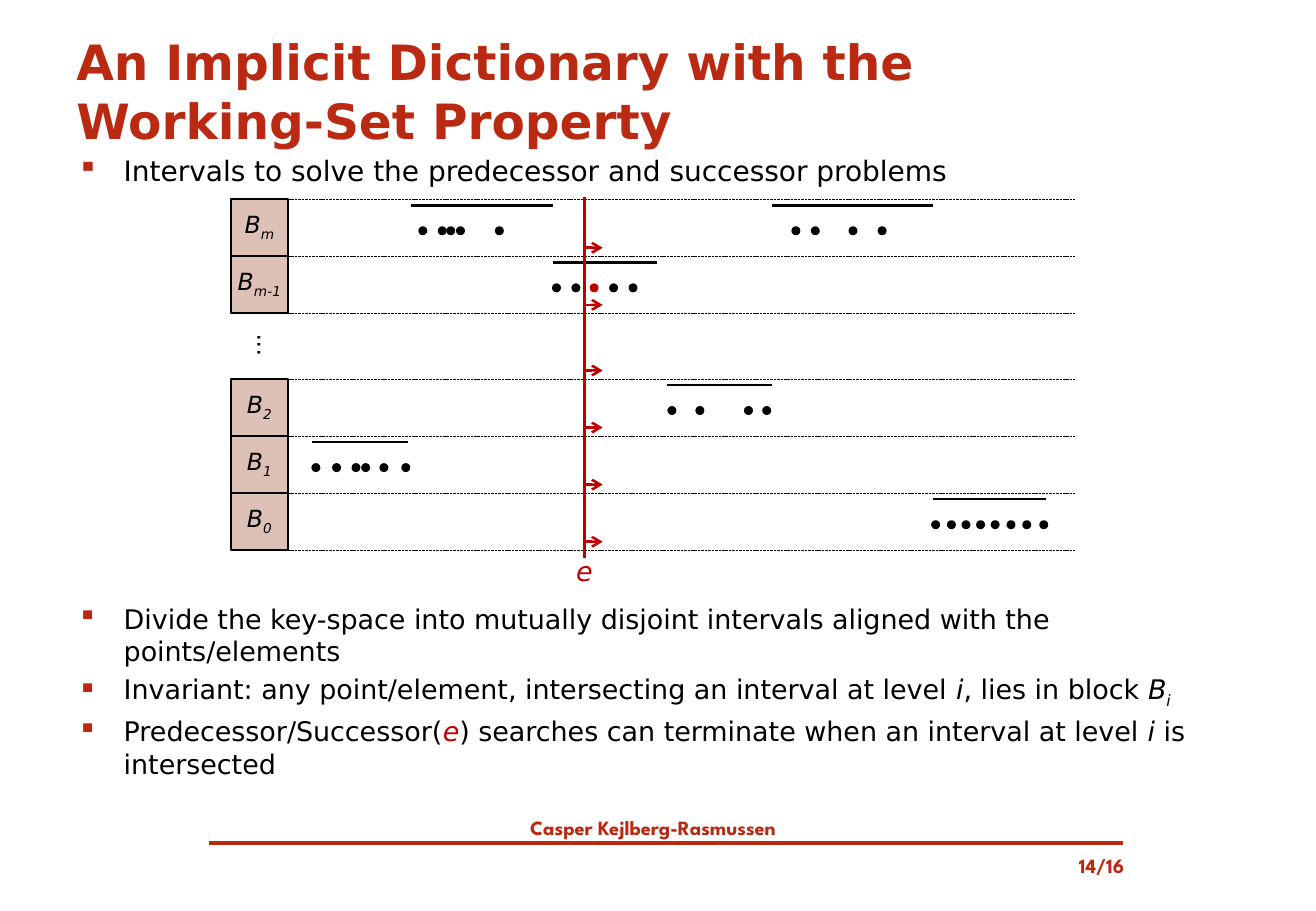
from lxml import etree
from pptx import Presentation
from pptx.dml.color import RGBColor
from pptx.enum.dml import MSO_LINE
from pptx.enum.shapes import MSO_CONNECTOR, MSO_SHAPE
from pptx.enum.text import MSO_ANCHOR, PP_ALIGN
from pptx.oxml.ns import qn
from pptx.util import Inches, Pt

STRAIGHT = MSO_CONNECTOR.STRAIGHT
RECT, OVAL = MSO_SHAPE.RECTANGLE, MSO_SHAPE.OVAL
DASH = MSO_LINE.SQUARE_DOT
TOP, MIDDLE = MSO_ANCHOR.TOP, MSO_ANCHOR.MIDDLE
LEFT, CENTER, RIGHT = PP_ALIGN.LEFT, PP_ALIGN.CENTER, PP_ALIGN.RIGHT

SANS, SPARTAN = "DejaVu Sans", "League Spartan"
BRAND, SEARCH, BLOCK, BLACK = "BA2A12", "C00000", "DDC0B6", "000000"

ITALIC = {"italic": True}
SUB = {"italic": True, "sub": True}

ROW_H, GAP_H = 0.47, 0.54
DOT = 0.06
RAIL_END = 6.95
SEARCH_X = 2.91
# Block subscript (None for the gap), intervals and points; x from the left edge of the blocks
LEVELS = [
    ("m", [(1.48, 2.65), (4.45, 5.78)],
     [1.55, 1.71, 1.78, 1.86, 2.18, 4.62, 4.78, 5.09, 5.33]),
    ("m-1", [(2.65, 3.51)], [2.65, 2.81, 2.96, 3.12, 3.28]),
    (None, [], []),
    ("2", [(3.59, 4.45)], [3.6, 3.83, 4.23, 4.38]),
    ("1", [(0.67, 1.46)], [0.67, 0.84, 1.0, 1.08, 1.23, 1.41]),
    ("0", [(5.78, 6.71)], [5.77, 5.9, 6.02, 6.14, 6.26, 6.39, 6.52, 6.66]),
]
SEARCHED = ("m-1", 2.96)

INTRO = [["Intervals to solve the predecessor and successor problems"]]
POINTS = [
    ["Divide the key-space into mutually disjoint intervals aligned with the points/elements"],
    ["Invariant: any point/element, intersecting an interval at level ", ("i", ITALIC),
     ", lies in block ", ("B", ITALIC), ("i", SUB)],
    ["Predecessor/Successor(", ("e", {"italic": True, "color": SEARCH}),
     ") searches can terminate when an interval at level ", ("i", ITALIC), " is intersected"],
]


def rgb(color):
    return RGBColor.from_string(color)


def add_bullet(p):
    pPr = p._p.get_or_add_pPr()
    pPr.set("marL", str(Inches(0.38)))
    pPr.set("indent", str(-Inches(0.38)))
    clr = etree.SubElement(pPr, qn("a:buClr"))
    etree.SubElement(clr, qn("a:srgbClr"), val=BRAND)
    etree.SubElement(pPr, qn("a:buChar"), char="▪")


def write(tf, paragraphs, size, color=BLACK, font=SANS, bold=False, align=LEFT,
          anchor=TOP, wrap=True, bullet=False, spacing=None):
    """Fill a text frame; each paragraph lists strings or (string, format) pairs."""
    tf.word_wrap = wrap
    tf.vertical_anchor = anchor
    for i, runs in enumerate(paragraphs):
        p = tf.add_paragraph() if i else tf.paragraphs[0]
        if bullet:
            add_bullet(p)
        p.alignment = align
        p.space_before = Pt(0.2 * size if i else 0)
        if spacing:
            p.line_spacing = spacing
        for run in runs:
            if run == "\n":
                p.add_line_break()
                continue
            text, fmt = (run, {}) if isinstance(run, str) else run
            r = p.add_run()
            r.text = text
            r.font.name, r.font.size, r.font.bold = font, Pt(size), bold
            r.font.italic = fmt.get("italic", False)
            r.font.color.rgb = rgb(fmt.get("color", color))
            if fmt.get("sub"):
                r.font._element.set("baseline", "-25000")


def add_text(s, x, y, w, h, paragraphs, size, **fmt):
    sp = s.shapes.add_textbox(Inches(x), Inches(y), Inches(w), Inches(h))
    write(sp.text_frame, paragraphs, size, **fmt)
    return sp


def add_shape(s, kind, x, y, w, h, fill, line):
    sp = s.shapes.add_shape(kind, Inches(x), Inches(y), Inches(w), Inches(h))
    sp.shadow.inherit = False
    sp.fill.solid()
    sp.fill.fore_color.rgb = rgb(fill)
    sp.line.color.rgb = rgb(line)
    sp.line.width = Pt(1)
    return sp


def add_line(s, x1, y1, x2, y2, color=BLACK, width=1.5, dash=None, arrow=False):
    cx = s.shapes.add_connector(STRAIGHT, Inches(x1), Inches(y1), Inches(x2), Inches(y2))
    cx.line.color.rgb = rgb(color)
    cx.line.width = Pt(width)
    if dash:
        cx.line.dash_style = dash
    if arrow:
        etree.SubElement(cx.line._get_or_add_ln(), qn("a:tailEnd"), type="arrow")
    etree.SubElement(cx._element.spPr, qn("a:effectLst"))


def add_block(s, x, y, subscript):
    sp = add_shape(s, RECT, x, y, ROW_H, ROW_H, BLOCK, BLACK)
    tf = sp.text_frame
    tf.margin_left = tf.margin_right = tf.margin_top = 0
    tf.margin_bottom = Inches(0.03)
    write(tf, [[("B", ITALIC), (subscript, SUB)]], 14,
          align=CENTER, anchor=MIDDLE, wrap=False)


def add_level(s, x, y, subscript, intervals, points):
    if subscript is None:
        dots = add_text(s, x - 0.11, y + 0.09, 0.55, 0.34, [["..."]], 14,
                        align=CENTER, anchor=MIDDLE)
        dots.rotation = 270
    else:
        add_block(s, x, y, subscript)
    for start, end in intervals:
        add_line(s, x + start, y + 0.05, x + end, y + 0.05)
    for point in points:
        color = SEARCH if (subscript, point) == SEARCHED else BLACK
        add_shape(s, OVAL, x + point, y + 0.23, DOT, DOT, color, color)


def add_diagram(s, x, y):
    """Draw the levels downwards from (x, y), then the search line for e."""
    def add_rail(rail_y):
        add_line(s, x + ROW_H, rail_y, x + RAIL_END, rail_y, width=0.5, dash=DASH)

    bottom, arrows = y, []
    for level in LEVELS:
        add_rail(bottom)
        add_level(s, x, bottom, *level)
        bottom += GAP_H if level[0] is None else ROW_H
        arrows.append(bottom - 0.07)
    add_rail(bottom)

    line_x = x + SEARCH_X
    add_line(s, line_x, bottom + 0.06, line_x, y - 0.02, color=SEARCH)
    for arrow_y in arrows:
        add_line(s, line_x, arrow_y, line_x + 0.15, arrow_y, color=SEARCH, arrow=True)
    add_text(s, line_x - 0.17, bottom - 0.01, 0.34, 0.37, [[("e", ITALIC)]], 16,
             color=SEARCH, align=CENTER, wrap=False)


def add_footer(s, x, y, w):
    style = {"color": BRAND, "font": SPARTAN, "bold": True}
    add_text(s, x, y, w, 0.3, [["Casper Kejlberg-Rasmussen"]], 12, align=CENTER, **style)
    add_line(s, x + 1.19, y + 0.28, x + 8.71, y + 0.28, color=BRAND, width=2.25)
    add_text(s, x + 7.84, y + 0.32, 0.98, 0.3, [["14/16"]], 12, align=RIGHT, **style)


def main():
    prs = Presentation()
    prs.slide_width, prs.slide_height = Inches(10.83), Inches(7.5)
    s = prs.slides.add_slide(prs.slide_layouts[6])
    add_text(s, 0.53, 0.36, 9.75, 0.77,
             [["An Implicit Dictionary with the", "\n", "Working-Set Property"]], 28.8,
             color=BRAND, bold=True, anchor=MIDDLE)
    add_text(s, 0.54, 1.27, 9.77, 0.35, INTRO, 16.6, bullet=True, spacing=0.8)
    add_diagram(s, 1.9, 1.64)
    add_text(s, 0.54, 4.91, 9.77, 1.55, POINTS, 16, bullet=True)
    add_footer(s, 0.53, 6.66, 9.69)
    prs.save("out.pptx")


if __name__ == "__main__":
    main()
